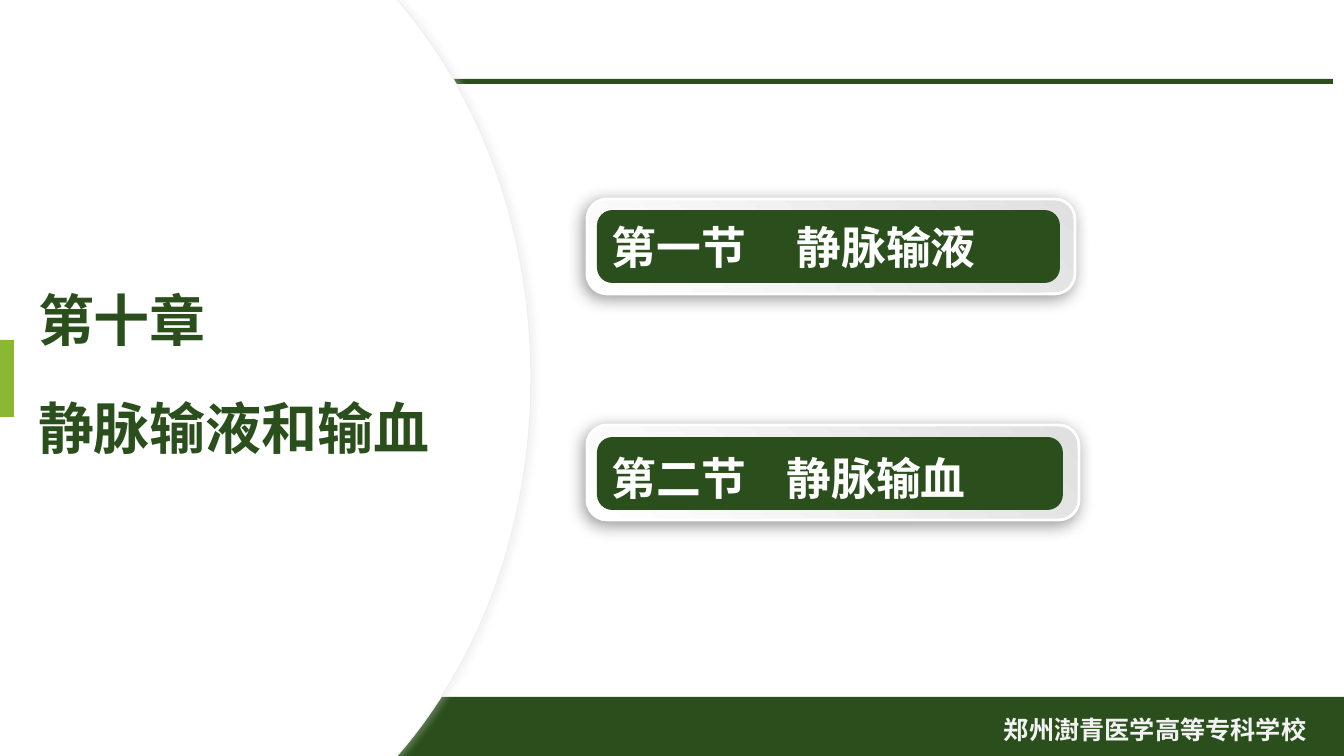
"""Builds the chapter opener slide: curved title panel, two section plates and a school footer."""
from dataclasses import dataclass

from lxml.etree import SubElement
from pptx import Presentation
from pptx.dml.color import RGBColor
from pptx.enum.shapes import MSO_SHAPE as Shape
from pptx.enum.text import MSO_ANCHOR as Anchor, MSO_AUTO_SIZE as AutoSize, PP_ALIGN as Align
from pptx.oxml.ns import qn
from pptx.util import Emu, Pt

EMU_PER_PX = 914400 / 100.8
SLIDE_W, SLIDE_H = 1344, 756
GREEN = RGBColor(0x2A, 0x4F, 0x1C)
LIME = RGBColor(0x8A, 0xB8, 0x33)
WHITE = RGBColor(0xFF, 0xFF, 0xFF)
SILVER = RGBColor(0xE0, 0xE0, 0xE0)
PANEL_EDGE = RGBColor(0xEF, 0xEF, 0xEF)
PANEL_SHADE = RGBColor(0xD9, 0xD9, 0xD9)
FOOTER_TEXT = RGBColor(0xF2, 0xF2, 0xF2)
BLACK = RGBColor(0, 0, 0)
CJK_FONT = "Noto Sans CJK SC"
CORNER = 0.211
ARC = ((404, 8), (483, 103), (531, 234), (531, 378))
ARC_STEPS = 24


@dataclass(frozen=True)
class Box:
    left: int
    top: int
    width: int
    height: int

    def emu(self) -> tuple:
        return tuple(px(n) for n in (self.left, self.top, self.width, self.height))


@dataclass(frozen=True)
class Section:
    number: str
    name: str
    frame: Box
    plate: Box
    name_tab: int
    drop: int


SECTIONS = (
    Section("第一节", "静脉输液", Box(587, 199, 488, 95), Box(597, 210, 463, 73), 185, 0),
    Section("第二节", "静脉输血", Box(587, 425, 492, 95), Box(597, 437, 466, 73), 175, 8),
)


def px(n: float) -> Emu:
    return Emu(round(n * EMU_PER_PX))


def style_paragraph(paragraph, size: int, face: str, color: RGBColor) -> None:
    paragraph.alignment = Align.LEFT
    font = paragraph.font
    font.size, font.bold, font.name = Pt(size), True, face
    font.color.rgb = color
    defaults = paragraph._p.get_or_add_pPr().find(qn("a:defRPr"))
    SubElement(defaults, qn("a:ea"), typeface=CJK_FONT)


def set_margins(frame, left: int, top: int, right: int, bottom: int) -> None:
    frame.margin_left, frame.margin_top = px(left), px(top)
    frame.margin_right, frame.margin_bottom = px(right), px(bottom)


def add_shadow(shape, color: RGBColor, alpha: int, blur: int, distance: int, angle: int) -> None:
    shape.shadow.inherit = False
    effects = shape._element.spPr.find(qn("a:effectLst"))
    outer = SubElement(effects, qn("a:outerShdw"), blurRad=str(Pt(blur)), dist=str(Pt(distance)),
                       dir=str(angle * 60000), algn="ctr", rotWithShape="0")
    shade = SubElement(outer, qn("a:srgbClr"), val=str(color))
    SubElement(shade, qn("a:alpha"), val=str(alpha * 1000))


def add_block(shapes, kind: Shape, box: Box, color: RGBColor):
    block = shapes.add_shape(kind, *box.emu())
    block.shadow.inherit = False
    block.fill.solid()
    block.fill.fore_color.rgb = color
    block.line.fill.background()
    return block


def arc_point(t: float, shift: int) -> tuple:
    weights = ((1 - t) ** 3, 3 * t * (1 - t) ** 2, 3 * t * t * (1 - t), t ** 3)
    x, y = (sum(w * p[axis] for w, p in zip(weights, ARC)) for axis in (0, 1))
    return px(x + shift), px(y)


def add_panel(shapes, shift: int):
    upper = [arc_point(i / ARC_STEPS, shift) for i in range(ARC_STEPS + 1)]
    lower = [(x, px(SLIDE_H) - y) for x, y in reversed(upper[:-1])]
    builder = shapes.build_freeform(0, 0)
    builder.add_line_segments([(px(397), 0), *upper, *lower, (px(397), px(SLIDE_H)), (0, px(SLIDE_H))])
    panel = builder.convert_to_shape()
    panel.shadow.inherit = False
    panel.fill.solid()
    panel.fill.fore_color.rgb = WHITE
    panel.line.fill.background()
    return panel


def add_section(shapes, section: Section) -> None:
    group = shapes.add_group_shape().shapes
    frame = group.add_shape(Shape.ROUNDED_RECTANGLE, *section.frame.emu())
    frame.adjustments[0] = CORNER
    frame.fill.gradient()
    frame.fill.gradient_angle = 225
    for stop, color, position in zip(frame.fill.gradient_stops, (SILVER, WHITE), (0, 1)):
        stop.color.rgb, stop.position = color, position
    frame.line.color.rgb = WHITE
    frame.line.width = Pt(2)
    add_shadow(frame, BLACK, 40, 12, 3, 135)

    plate = add_block(group, Shape.ROUNDED_RECTANGLE, section.plate, GREEN)
    plate.adjustments[0] = CORNER
    label = plate.text_frame
    label.vertical_anchor = Anchor.MIDDLE
    set_margins(label, 10, section.drop, 0, 0)
    paragraph = label.paragraphs[0]
    paragraph.text = f"{section.number}\t{section.name}"
    tabs = SubElement(paragraph._p.get_or_add_pPr(), qn("a:tabLst"))
    SubElement(tabs, qn("a:tab"), pos=str(px(section.name_tab)), algn="l")
    style_paragraph(paragraph, 32, "Arial Narrow", WHITE)


def place_title(title) -> None:
    title.element.getparent().append(title.element)
    title.left, title.top, title.width, title.height = Box(25, 128, 480, 499).emu()
    frame = title.text_frame
    frame.word_wrap, frame.auto_size = True, AutoSize.NONE
    frame.vertical_anchor = Anchor.MIDDLE
    set_margins(frame, 13, 7, 13, 7)
    frame.text = "第十章\n静脉输液和输血"
    for paragraph in frame.paragraphs:
        paragraph.line_spacing = 0.9
        paragraph.space_before = Pt(0)
        style_paragraph(paragraph, 40, "Montserrat", GREEN)
    frame.paragraphs[1].space_before = Pt(34)


def add_school(shapes) -> None:
    school = shapes.add_textbox(*Box(994, 709, 336, 40).emu()).text_frame
    school.word_wrap = True
    school.paragraphs[0].text = "郑州澍青医学高等专科学校"
    style_paragraph(school.paragraphs[0], 18, CJK_FONT, FOOTER_TEXT)


def main() -> None:
    deck = Presentation()
    deck.slide_width, deck.slide_height = px(SLIDE_W), px(SLIDE_H)
    slide = deck.slides.add_slide(deck.slide_layouts[5])
    shapes = slide.shapes
    add_block(shapes, Shape.RECTANGLE, Box(11, 79, 1322, 5), GREEN)
    add_block(shapes, Shape.RECTANGLE, Box(0, 697, SLIDE_W, 59), GREEN)
    edged_panel = add_panel(shapes, 0)
    edged_panel.line.color.rgb = PANEL_EDGE
    edged_panel.line.width = Pt(0.75)
    add_shadow(edged_panel, PANEL_SHADE, 30, 4, 3, 0)
    add_panel(shapes, -1)
    place_title(shapes.title)
    add_block(shapes, Shape.RECTANGLE, Box(0, 340, 14, 77), LIME)
    for section in SECTIONS:
        add_section(shapes, section)
    add_school(shapes)
    deck.save("out.pptx")


if __name__ == "__main__":
    main()
